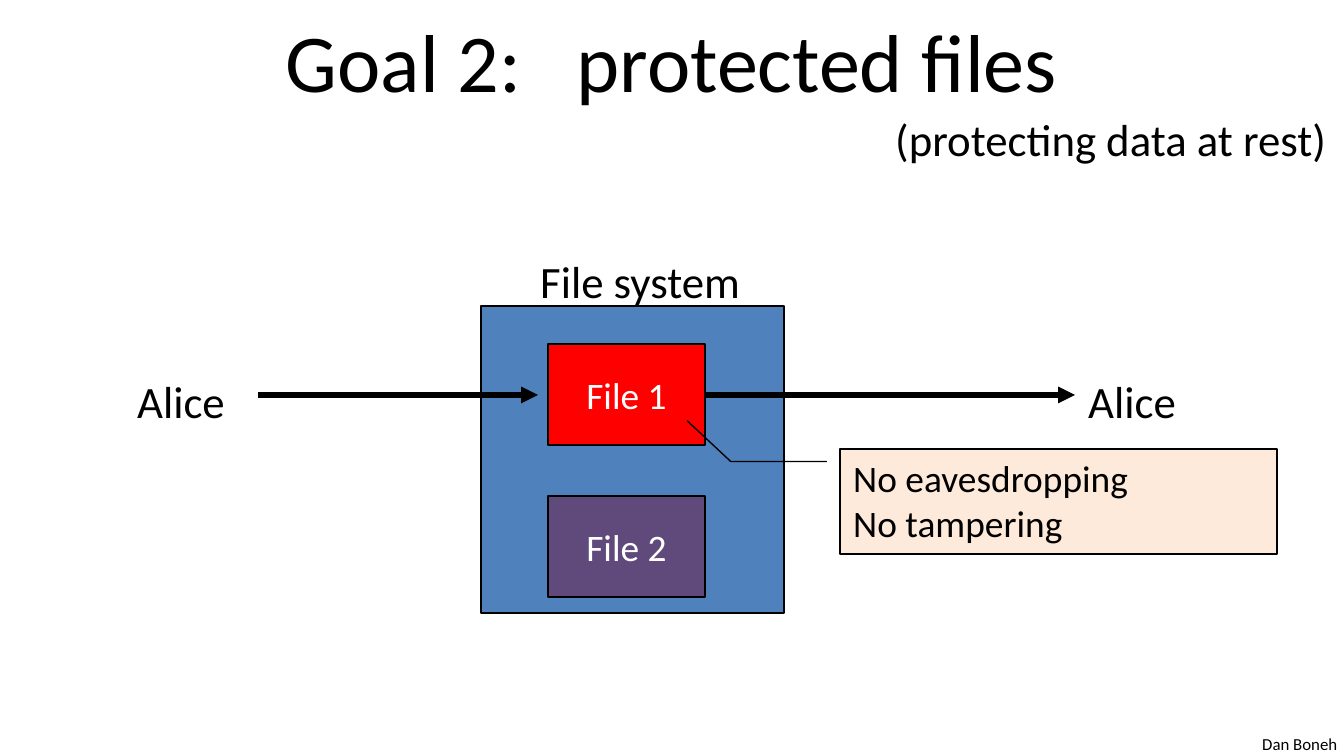
from lxml import etree
from pptx import Presentation
from pptx import util as u
from pptx.dml.color import RGBColor
from pptx.enum import shapes, text
from pptx.oxml.ns import qn

PX = 914400 / 134.4
FONT = "Calibri"
BLACK = RGBColor(0x00, 0x00, 0x00)
WHITE = RGBColor(0xFF, 0xFF, 0xFF)
BLUE = RGBColor(0x4F, 0x81, 0xBD)
RED = RGBColor(0xFF, 0x00, 0x00)
PURPLE = RGBColor(0x60, 0x4A, 0x7B)
PEACH = RGBColor(0xFD, 0xEA, 0xDA)


def px(*lengths):
    return [u.Emu(round(length * PX)) for length in lengths]


def write(frame, *lines, size=24, color=BLACK, align=text.PP_ALIGN.LEFT,
          anchor=text.MSO_ANCHOR.TOP, wrap=True, fit=text.MSO_AUTO_SIZE.NONE):
    frame.auto_size = fit
    frame.word_wrap = wrap
    frame.vertical_anchor = anchor
    for number, line in enumerate(lines):
        para = frame.add_paragraph() if number else frame.paragraphs[0]
        para.alignment = align
        span = para.add_run()
        span.text = line
        span.font.name = FONT
        span.font.size = u.Pt(size)
        span.font.color.rgb = color


def add_title(page, title):
    box = page.shapes.title
    box.left, box.top, box.width, box.height = px(67, -3, 1210, 126)
    write(box.text_frame, title, size=44, align=text.PP_ALIGN.CENTER,
          anchor=text.MSO_ANCHOR.MIDDLE)


def add_label(page, label, left, top, width, height=67, **style):
    box = page.shapes.add_textbox(*px(left, top, width, height))
    write(box.text_frame, label, fit=text.MSO_AUTO_SIZE.SHAPE_TO_FIT_TEXT, **style)


def add_box(page, place, fill, kind=shapes.MSO_SHAPE.RECTANGLE):
    box = page.shapes.add_shape(kind, *px(*place))
    box.shadow.inherit = False
    box.fill.solid()
    box.fill.fore_color.rgb = fill
    box.line.color.rgb = BLACK
    box.line.width = u.Pt(0.75)
    return box


def add_file(page, name, top, fill):
    box = add_box(page, (548, top, 157, 101), fill)
    write(box.text_frame, name, size=20, color=WHITE, wrap=False,
          align=text.PP_ALIGN.CENTER, anchor=text.MSO_ANCHOR.MIDDLE)


def add_arrow(page, start, end, level=395):
    arrow = page.shapes.add_connector(
        shapes.MSO_CONNECTOR.STRAIGHT, *px(start, level, end, level))
    arrow.line.color.rgb = BLACK
    arrow.line.width = u.Pt(3)
    etree.SubElement(arrow.line._get_or_add_ln(), qn("a:tailEnd"), type="triangle")
    etree.SubElement(arrow._element.spPr, qn("a:effectLst"))


def add_callout(page, *lines):
    box = add_box(page, (840, 449, 437, 105), PEACH, shapes.MSO_SHAPE.LINE_CALLOUT_2)
    for number, value in enumerate((0.12, -0.03, 0.12, -0.25, -0.27, -0.35)):
        box.adjustments[number] = value
    write(box.text_frame, *lines, size=20)


def main():
    deck = Presentation()
    deck.slide_width, deck.slide_height = px(1344, 756)
    page = deck.slides.add_slide(deck.slide_layouts[5])

    add_label(page, "Dan Boneh", 1249, 727, 102, 34, size=9, wrap=False)
    add_title(page, "Goal 2:   protected files")
    add_box(page, (481, 306, 303, 307), BLUE)
    add_label(page, "File system", 527, 247, 290)
    add_file(page, "File 1", 344, RED)
    add_file(page, "File 2", 496, PURPLE)
    for start, end, label_left in ((258, 538, 124), (706, 1075, 1075)):
        add_arrow(page, start, end)
        add_label(page, "Alice", label_left, 367, 125)
    add_callout(page, "No eavesdropping", "No tampering")
    add_label(page, "(protecting data at rest)", 882, 105, 462, wrap=False)

    deck.save("out.pptx")


if __name__ == "__main__":
    main()
